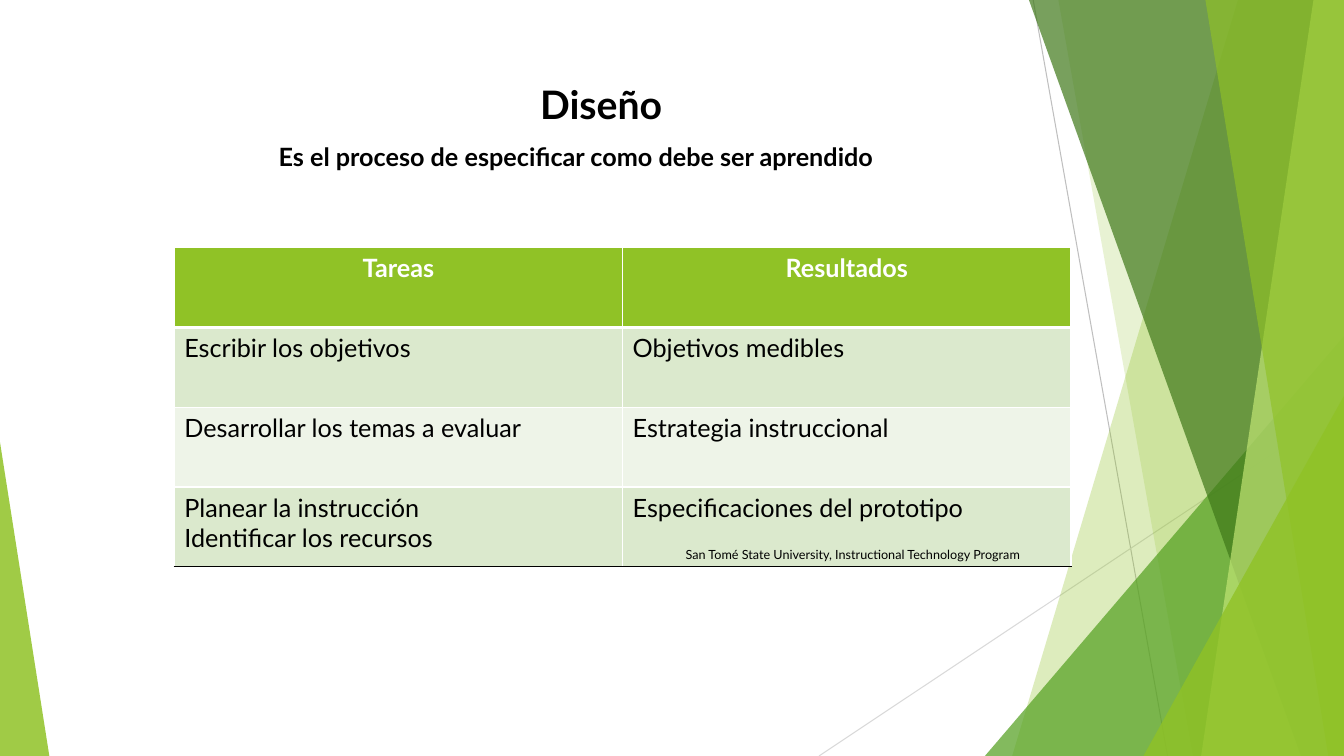
from dataclasses import dataclass

from lxml.etree import SubElement as Sub, fromstring as parse_xml
from pptx import Presentation as Deck
from pptx.dml.color import RGBColor as Rgb
from pptx.enum.shapes import MSO_CONNECTOR as Wire, MSO_SHAPE as Form
from pptx.enum.text import PP_ALIGN as Align
from pptx.oxml.ns import nsdecls, qn
from pptx.util import Pt

PX = 9525
WIDE, HIGH = 1280, 720


@dataclass(frozen=True)
class Theme:
    face: str = "Lato"
    black: str = "000000"
    white: str = "FFFFFF"
    lime: str = "90C226"
    grass: str = "54A021"
    moss: str = "3F7819"
    pale: str = "C0E474"
    band: str = "DBE9CD"
    light: str = "EEF4E8"
    steep: str = "BFBFBF"
    flat: str = "D9D9D9"
    head: int = 28
    main: int = 18
    note: int = 9


LOOK = Theme()


def px(*nums):
    return [num * PX for num in nums]


def put(item, vals):
    for name, val in vals.items():
        setattr(item, name, val)


def tint(shape, tone, alpha):
    shape.shadow.inherit = False
    shape.fill.solid()
    shape.fill.fore_color.rgb = Rgb.from_string(tone)
    shape.line.fill.background()
    clr = shape.fill._xPr.find(f".//{qn('a:srgbClr')}")
    Sub(clr, qn("a:alpha"), val=str(alpha * 1000))


def panel(slide, top, base, tone, alpha):
    draw = slide.shapes.build_freeform(top, 0, scale=PX)
    draw.add_line_segments([(WIDE, 0), (WIDE, HIGH), (base, HIGH)], close=True)
    tint(draw.convert_to_shape(), tone, alpha)


def wedge(slide, box, peak, tone, alpha):
    shape = slide.shapes.add_shape(Form.ISOSCELES_TRIANGLE, *px(*box))
    shape.adjustments[0] = peak
    tint(shape, tone, alpha)


def line(slide, ends, tone):
    wire = slide.shapes.add_connector(Wire.STRAIGHT, *px(*ends))
    wire.line.width = Pt(0.75)
    wire.line.color.rgb = Rgb.from_string(tone)
    Sub(wire._element.spPr, qn("a:effectLst"))


def write(par, text, size, tone=LOOK.black, bold=False, align=Align.LEFT):
    par.alignment = align
    run = par.add_run()
    run.text = text
    put(run.font, {"name": LOOK.face, "size": Pt(size), "bold": bold})
    run.font.color.rgb = Rgb.from_string(tone)


def label(slide, box, rows):
    frame = slide.shapes.add_textbox(*px(*box)).text_frame
    frame.word_wrap = True
    for i, (text, size, bold, shift) in enumerate(rows):
        par = frame.add_paragraph() if i else frame.paragraphs[0]
        write(par, text, size, bold=bold, align=Align.CENTER)
        par._p.get_or_add_pPr().set("marL", str(shift * PX))
        if i:
            par.space_before = Pt(10)


def edge(cell, sides):
    props = cell._tc.get_or_add_tcPr()
    for i, (side, (tone, width)) in enumerate(sides.items()):
        props.insert(i, parse_xml(
            f'<a:ln{side} {nsdecls("a")} w="{Pt(width)}"><a:solidFill>'
            f'<a:srgbClr val="{tone}"/></a:solidFill></a:ln{side}>'))


def grid(slide, box, rows):
    count = len(rows)
    table = slide.shapes.add_table(count, len(rows[0]), *px(*box)).table
    for r, row in enumerate(rows):
        head = r == 0
        fill = LOOK.lime if head else (LOOK.light, LOOK.band)[r % 2]
        style = {
            "size": LOOK.main,
            "tone": LOOK.white if head else LOOK.black,
            "bold": head,
            "align": Align.CENTER if head else Align.LEFT,
        }
        thin = (LOOK.white, 1)
        thick = (LOOK.white, 3)
        sides = {
            "L": thin,
            "R": thin,
            "T": thick if r == 1 else thin,
            "B": thick if head else (LOOK.black, 1) if r == count - 1 else thin,
        }
        for c, lines in enumerate(row):
            cell = table.cell(r, c)
            cell.fill.solid()
            cell.fill.fore_color.rgb = Rgb.from_string(fill)
            edge(cell, sides)
            frame = cell.text_frame
            for i, text in enumerate(lines.split("\n")):
                par = frame.add_paragraph() if i else frame.paragraphs[0]
                write(par, text, **style)


def facets(slide):
    line(slide, (984, 0, 1112, HIGH), LOOK.steep)
    line(slide, (WIDE, 387, 780, HIGH), LOOK.flat)
    panel(slide, 1179, 964, LOOK.lime, 30)
    panel(slide, 1008, 1136, LOOK.lime, 20)
    wedge(slide, (938, 320, 342, 400), 1, LOOK.grass, 72)
    panel(slide, 980, 1239, LOOK.moss, 70)
    panel(slide, 1251, 1144, LOOK.pale, 70)
    panel(slide, 1148, 1265, LOOK.lime, 65)
    wedge(slide, (1089, 377, 191, 343), 1, LOOK.lime, 80)
    wedge(slide, (0, 421, 47, 299), 0, LOOK.lime, 85)


def main():
    deck = Deck()
    put(deck, {"slide_width": WIDE * PX, "slide_height": HIGH * PX})
    slide = deck.slides.add_slide(deck.slide_layouts[6])
    facets(slide)
    label(slide, (72, 72, 896, 104), [
        ("Diseño", LOOK.head, True, 105),
        ("Es el proceso de especificar como debe ser aprendido",
         LOOK.main, True, 57),
    ])
    grid(slide, (166, 236, 854, 304), [
        ("Tareas", "Resultados"),
        ("Escribir los objetivos", "Objetivos medibles"),
        ("Desarrollar los temas a evaluar", "Estrategia instruccional"),
        ("Planear la instrucción\nIdentificar los recursos",
         "Especificaciones del prototipo"),
    ])
    label(slide, (492, 516, 640, 24), [
        ("San Tomé State University, Instructional Technology Program",
         LOOK.note, False, 0),
    ])
    deck.save("out.pptx")


if __name__ == "__main__":
    main()
